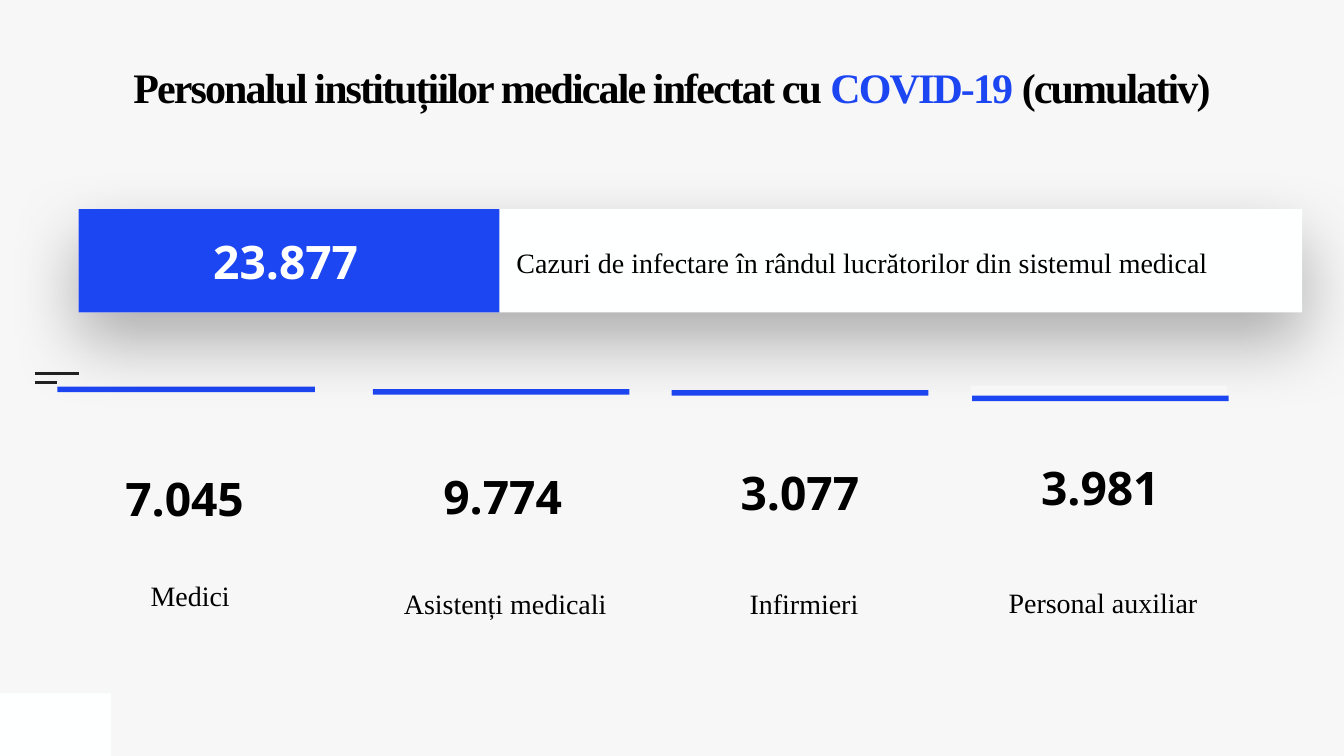
from lxml.etree import SubElement as Sub
from pptx import Presentation
from pptx.dml.color import RGBColor as Rgb
from pptx.enum.shapes import MSO_CONNECTOR as Conn, MSO_SHAPE as Kind
from pptx.enum.text import MSO_ANCHOR as Anchor, PP_ALIGN as Align
from pptx.oxml.ns import qn
from pptx.util import Inches, Pt

WIDE, HIGH = Inches(26.67), Inches(15)
HUES = {"back": "F7F7F7", "white": "FEFFFF", "pure": "FFFFFF",
        "blue": "1D46F3", "ink": "000000", "dash": "222222"}
LABEL = {"name": "Times New Roman", "size": Pt(40)}
COUNT = {"name": "Open Sans", "size": Pt(66), "bold": True}
TITLE = {"name": "Times New Roman", "size": Pt(60), "bold": True}
CARD_PAD = (2.06, 4.73, 1.46, 5.8)
TEXT_PAD = (0.37, 0.67, 0.37, 0.67)
RULE = 0.73
COUNT_H = 8.73

# label, count, card (left, top, width, bottom), rule (left, top), count (left, top)
CARDS = [
    ("Medici", "7.045", (4.27, 51.13, 19.16, 86.8), (4.27, 51.13), (4.16, 61.53)),
    ("Asistenți medicali", "9.774", (27.75, 51.47, 19.09, 87.87), (27.75, 51.47), (27.86, 61.27)),
    ("Infirmieri", "3.077", (49.98, 51.47, 19.09, 87.87), (49.98, 51.6), (49.98, 60.73)),
    ("Personal auxiliar", "3.981", (72.22, 51, 19.09, 87.67), (72.33, 52.33), (72.33, 60)),
]


def col(share):
    """Length of a percentage of the slide's width."""
    return round(WIDE * share / 100)


def row(share):
    """Length of a percentage of the slide's height."""
    return round(HIGH * share / 100)


def place(box):
    x, y, w, h = box
    return col(x), row(y), col(w), row(h)


def hue(key):
    return Rgb.from_string(HUES[key])


def apply(target, values):
    for name, value in values.items():
        setattr(target, name, value)


def write(shape, runs, font, pad=TEXT_PAD, anchor=Anchor.MIDDLE, **form):
    """Fill a shape with one paragraph of (text, colour) runs."""
    left, top, right, bottom = pad
    frame = shape.text_frame
    apply(frame, {"word_wrap": True, "vertical_anchor": anchor,
                  "margin_left": col(left), "margin_top": row(top),
                  "margin_right": col(right), "margin_bottom": row(bottom)})
    para = frame.paragraphs[0]
    apply(para, {"alignment": Align.CENTER, **form})
    for text, key in runs:
        run = para.add_run()
        run.text = text
        apply(run.font, font)
        run.font.color.rgb = hue(key)
    return para


def rect(slide, box, key):
    shape = slide.shapes.add_shape(Kind.RECTANGLE, *place(box))
    shape.shadow.inherit = False
    shape.fill.solid()
    shape.fill.fore_color.rgb = hue(key)
    shape.line.fill.background()
    return shape


def label(slide, box, runs, font, **form):
    return write(slide.shapes.add_textbox(*place(box)), runs, font, **form)


def dash(slide, left, right, y):
    line = slide.shapes.add_connector(Conn.STRAIGHT, col(left), row(y), col(right), row(y))
    line.line.color.rgb = hue("dash")
    line.line.width = Pt(3)
    Sub(line._element.spPr, qn("a:effectLst"))


def shade(shape):
    """Give a shape a soft shadow that falls straight down."""
    effect = shape._element.spPr.find(qn("a:effectLst"))
    outer = Sub(effect, qn("a:outerShdw"), blurRad=str(Pt(100)), dist=str(Pt(40)),
                dir="5400000", algn="t", rotWithShape="0")
    tint = Sub(outer, qn("a:srgbClr"), val=HUES["ink"])
    Sub(tint, qn("a:alpha"), val="30000")


def card(slide, text, count, area, rule, spot):
    x, y, w, end = area
    panel = rect(slide, (x, y, w, end - y), "back")
    write(panel, [(text, "ink")], LABEL, CARD_PAD, Anchor.BOTTOM,
          line_spacing=1.3, space_before=Pt(20))
    rect(slide, (*rule, w, RULE), "blue")
    label(slide, (*spot, w, COUNT_H), [(count, "ink")], COUNT)


def title(slide):
    para = label(slide, (0, 9.47, 100, 5.4),
                 [("Personalul instituțiilor medicale infectat cu ", "ink"),
                  ("COVID-19 ", "blue"), ("(cumulativ)", "ink")],
                 TITLE, pad=(0, 0, 0, 0), anchor=Anchor.TOP, line_spacing=0.8)
    for run in para.runs:
        run.font._element.set("spc", "-270")


def banner(slide):
    x, y, h = 5.85, 27.67, 13.67
    shade(rect(slide, (x, y, 91.04, h), "white"))
    label(slide, (38.06, 31.8, 59.06, 5.87),
          [("Cazuri de infectare în rândul lucrătorilor din sistemul medical", "ink")],
          LABEL, alignment=Align.LEFT)
    rect(slide, (x, y, 31.31, h), "blue")
    label(slide, (x, 30.13, 30.82, COUNT_H), [("23.877", "pure")], COUNT)


def main():
    deck = Presentation()
    apply(deck, {"slide_width": WIDE, "slide_height": HIGH})
    slide = deck.slides.add_slide(deck.slide_layouts[6])
    slide.background.fill.solid()
    slide.background.fill.fore_color.rgb = hue("back")

    rect(slide, (0, 91.73, 8.25, 8.27), "white")
    dash(slide, 2.59, 5.89, 49.4)
    dash(slide, 2.59, 4.24, 50.6)
    for item in CARDS[:3]:
        card(slide, *item)
    title(slide)
    banner(slide)
    card(slide, *CARDS[3])
    deck.save("out.pptx")


if __name__ == "__main__":
    main()
